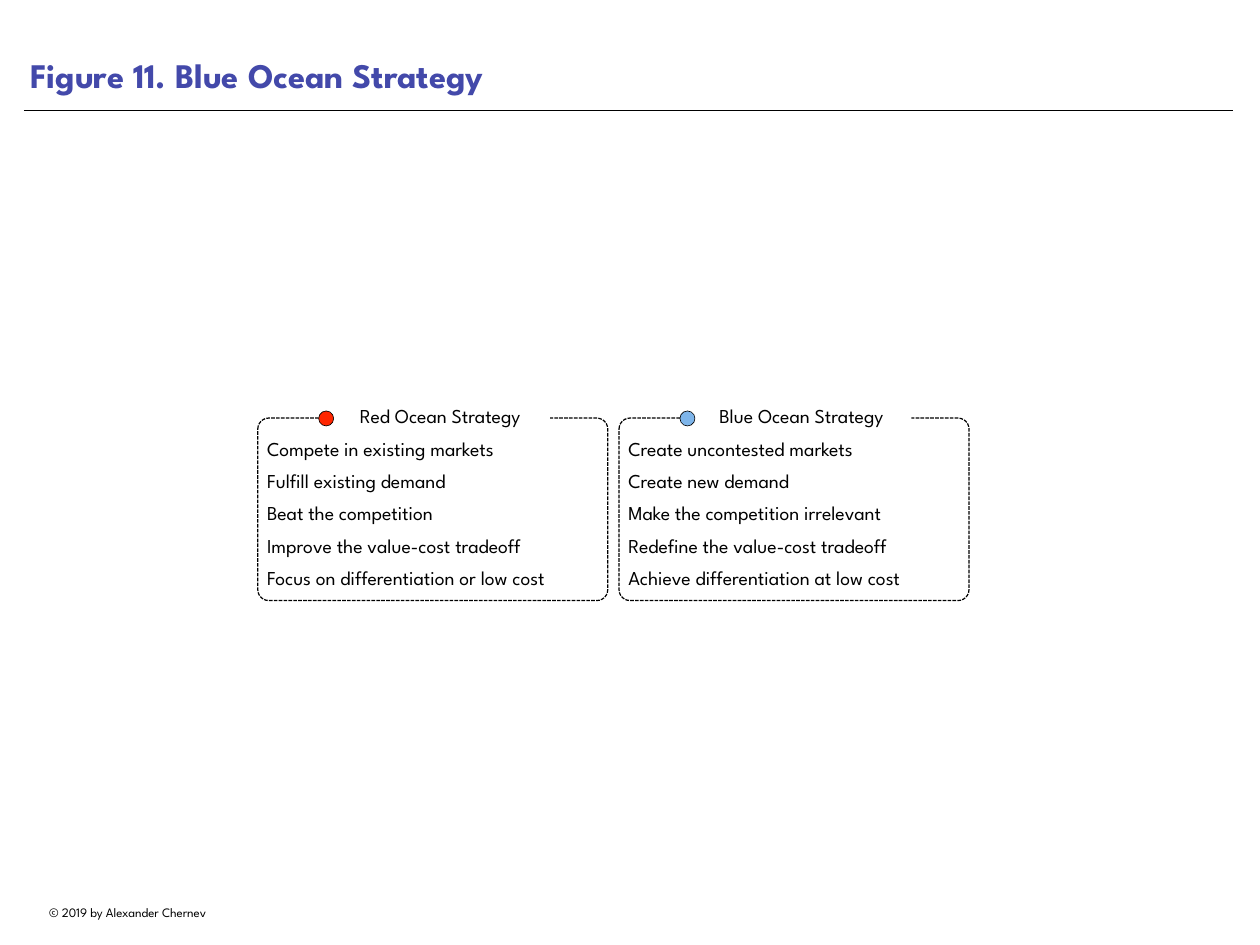
from pptx import Presentation
from pptx.dml.color import RGBColor
from pptx.enum.dml import MSO_LINE
from pptx.enum.shapes import MSO_CONNECTOR, MSO_SHAPE
from pptx.enum.text import MSO_ANCHOR as Anchor, MSO_AUTO_SIZE, PP_ALIGN as Align
from pptx.oxml.ns import qn
from pptx.util import Pt
from lxml.etree import SubElement

SLIDE_WIDTH, SLIDE_HEIGHT = 1024, 768
COLUMN_LEFT, COLUMN_PITCH = 209.5, 293.6
FRAME_TOP, FRAME_WIDTH, FRAME_HEIGHT = 339.8, 284.4, 148.3
ROW_PITCH = 26.3

STRATEGIES = [
    ("Red Ocean Strategy", "FF2600", [
        "Compete in existing markets",
        "Fulfill existing demand",
        "Beat the competition",
        "Improve the value-cost tradeoff",
        "Focus on differentiation or low cost",
    ]),
    ("Blue Ocean Strategy", "7EB5EA", [
        "Create uncontested markets",
        "Create new demand",
        "Make the competition irrelevant",
        "Redefine the value-cost tradeoff",
        "Achieve differentiation at low cost",
    ]),
]


def color(value):
    return RGBColor.from_string(value)


class SlideBuilder:
    font_name = "League Spartan"
    ink = "000000"
    accent = "4349AA"
    paper = "FFFFFF"

    def __init__(self, slide):
        self.slide = slide

    def place(self, shape, left, top, width, height):
        shape.left, shape.top = Pt(left), Pt(top)
        shape.width, shape.height = Pt(width), Pt(height)

    def set_text(self, shape, text, size, ink=None, bold=False, align=Align.LEFT,
                 anchor=Anchor.MIDDLE, inset=0, spacing=None, wrap=True):
        frame = shape.text_frame
        frame.text = text
        frame.word_wrap = wrap
        frame.auto_size = MSO_AUTO_SIZE.NONE
        frame.vertical_anchor = anchor
        frame.margin_left = frame.margin_right = Pt(inset)
        frame.margin_top = frame.margin_bottom = Pt(inset)
        for paragraph in frame.paragraphs:
            paragraph.alignment = align
            paragraph.space_before = paragraph.space_after = Pt(0)
            if spacing:
                paragraph.line_spacing = spacing
            for run in paragraph.runs:
                run.font.name = self.font_name
                run.font.size = Pt(size)
                run.font.bold = bold
                run.font.color.rgb = color(ink or self.ink)

    def title(self, text, *box):
        shape = self.slide.shapes.title
        self.place(shape, *box)
        self.set_text(shape, text, 28, self.accent, bold=True, anchor=Anchor.BOTTOM, inset=5)

    def points(self, index, lines, *box):
        shape = self.slide.placeholders[index]
        self.place(shape, *box)
        self.set_text(shape, "\n".join(lines), 16, anchor=Anchor.TOP, spacing=Pt(ROW_PITCH))
        for paragraph in shape.text_frame.paragraphs:
            properties = paragraph._p.get_or_add_pPr()
            properties.set("marL", "0")
            properties.set("indent", "0")
            SubElement(properties, qn("a:buNone"))

    def shape(self, kind, left, top, width, height, fill=None, line_width=None):
        shape = self.slide.shapes.add_shape(kind, Pt(left), Pt(top), Pt(width), Pt(height))
        shape.shadow.inherit = False
        if fill:
            shape.fill.solid()
            shape.fill.fore_color.rgb = color(fill)
        else:
            shape.fill.background()
        if line_width:
            shape.line.color.rgb = color(self.ink)
            shape.line.width = Pt(line_width)
        else:
            shape.line.fill.background()
        return shape

    def frame(self, *box):
        shape = self.shape(MSO_SHAPE.ROUNDED_RECTANGLE, *box, line_width=1)
        shape.adjustments[0] = 0.06
        shape.line.dash_style = MSO_LINE.SQUARE_DOT

    def label(self, text, *box):
        shape = self.shape(MSO_SHAPE.RECTANGLE, *box, fill=self.paper)
        self.set_text(shape, text, 16, align=Align.CENTER, spacing=0.8)

    def dot(self, fill, left, top, size):
        self.shape(MSO_SHAPE.OVAL, left, top, size, size, fill, 0.5)

    def rule(self, left, right, top):
        line = self.slide.shapes.add_connector(
            MSO_CONNECTOR.STRAIGHT, Pt(left), Pt(top), Pt(right), Pt(top))
        line.line.color.rgb = color(self.ink)
        line.line.width = Pt(0.5)
        SubElement(line._element.spPr, qn("a:effectLst"))

    def credit(self, text, left, top, width, height):
        shape = self.slide.shapes.add_textbox(Pt(left), Pt(top), Pt(width), Pt(height))
        self.set_text(shape, text, 10.5, align=Align.CENTER, anchor=Anchor.TOP,
                      inset=3.6, wrap=False)


def main():
    presentation = Presentation()
    presentation.slide_width, presentation.slide_height = Pt(SLIDE_WIDTH), Pt(SLIDE_HEIGHT)
    two_content = presentation.slide_layouts[3]
    builder = SlideBuilder(presentation.slides.add_slide(two_content))

    builder.credit("© 2019 by Alexander Chernev", 19.5, 731.5, 168.5, 20)
    builder.rule(19.5, 1002, 89.3)
    builder.title("Figure 11. Blue Ocean Strategy", 19.5, 0, 982, 82.8)

    for column, (name, fill, lines) in enumerate(STRATEGIES):
        left = COLUMN_LEFT + column * COLUMN_PITCH
        builder.points(column + 1, lines, left + 7.5, 347.5, 276, ROW_PITCH * len(lines))
        builder.frame(left, FRAME_TOP, FRAME_WIDTH, FRAME_HEIGHT)
        builder.label(name, left + 59, 327, 178.5, 24.5)
        builder.dot(fill, left + 49.5, 334, 12.2)

    presentation.save("out.pptx")


if __name__ == "__main__":
    main()
